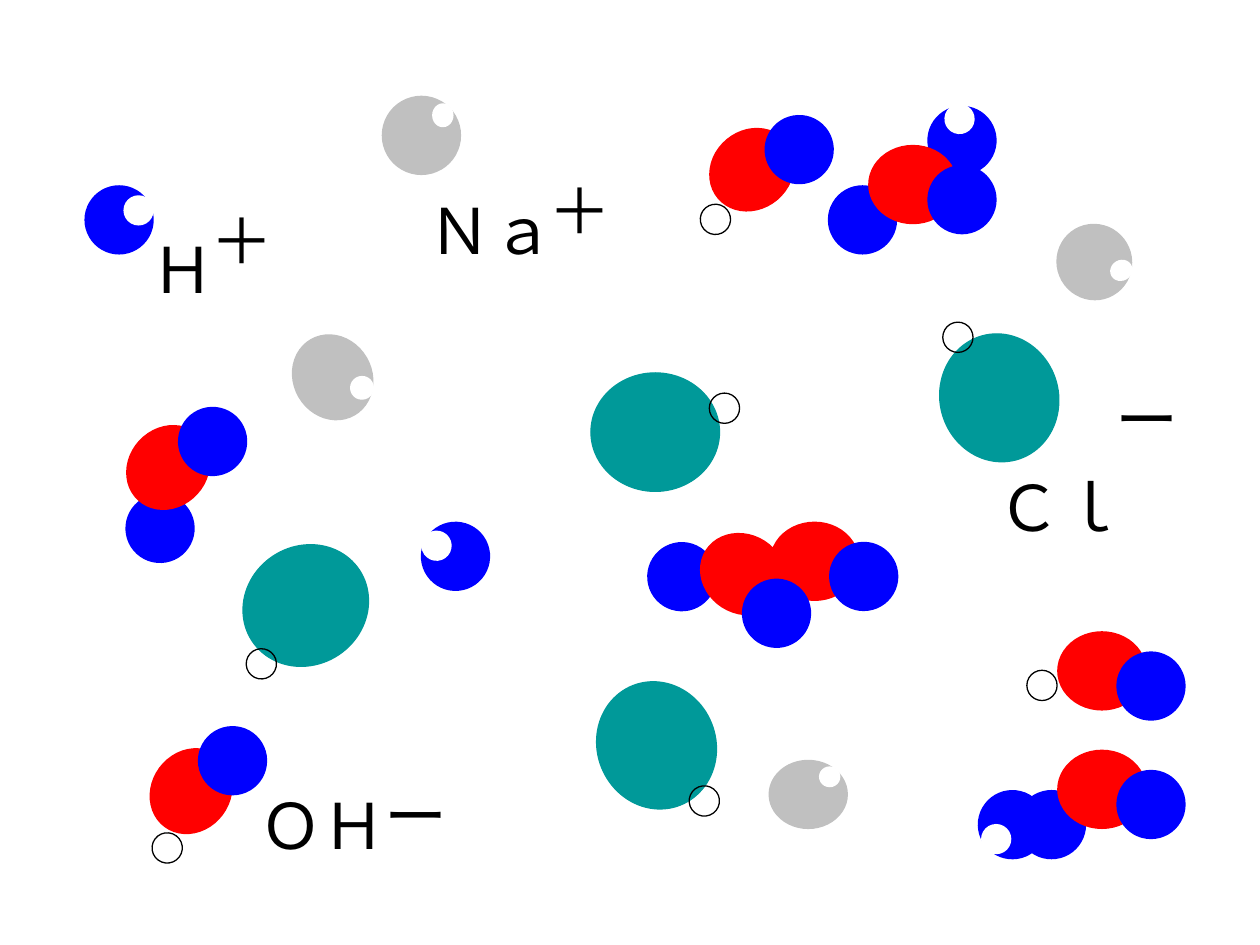
from dataclasses import dataclass
from typing import NamedTuple, Optional

from lxml import etree
from pptx import Presentation
from pptx.dml.color import RGBColor
from pptx.enum.shapes import MSO_SHAPE
from pptx.enum.text import MSO_ANCHOR, PP_ALIGN
from pptx.oxml.ns import qn
from pptx.slide import Slide
from pptx.util import Emu, Pt

PX = 9144  # 100 px to the inch
BLANK_LAYOUT = 6
ELLIPSE = MSO_SHAPE.OVAL
TOP = MSO_ANCHOR.TOP
CENTER = PP_ALIGN.CENTER
LETTER_WIDTH = 52
LABEL_TOP_MARGIN = 5


@dataclass(frozen=True)
class Theme:
    font: str = "Noto Sans CJK JP"
    label_size: int = 36
    line_width: float = 0.75
    hydrogen: str = "0000FF"
    oxygen: str = "FF0000"
    chlorine: str = "009999"
    sodium: str = "C0C0C0"
    white: str = "FFFFFF"
    black: str = "000000"


THEME = Theme()


class Ball(NamedTuple):
    left: int
    top: int
    width: int
    height: int
    fill: Optional[str] = None
    line: Optional[str] = None


class Particle(NamedTuple):
    """A group of balls; width and height, where given, stretch the group."""
    balls: tuple[Ball, ...]
    left: int
    top: int
    rotation: float = 0
    width: Optional[int] = None
    height: Optional[int] = None


class Label(NamedTuple):
    text: str
    center: int
    top: int
    height: int
    rotation: int = 0


PROTON = (
    Ball(0, 0, 55, 55, THEME.hydrogen),
    Ball(31, 8, 24, 24, THEME.white),
)
SODIUM_ION = (
    Ball(0, 0, 63, 63, THEME.sodium),
    Ball(40, 6, 17, 19, THEME.white),
)
CHLORIDE_ION = (
    Ball(0, 0, 102, 94, THEME.chlorine, THEME.chlorine),
    Ball(94, 16, 24, 24, None, THEME.black),
)
HYDROXIDE_ION = (
    Ball(0, 31, 24, 24, THEME.white, THEME.black),
    Ball(24, 0, 71, 63, THEME.oxygen),
    Ball(71, 16, 55, 55, THEME.hydrogen),
)
WATER = (
    Ball(0, 32, 55, 55, THEME.hydrogen),
    Ball(32, 0, 71, 63, THEME.oxygen),
    Ball(79, 16, 55, 55, THEME.hydrogen),
)

PARTICLES = (
    Particle(PROTON, 67, 147),
    Particle(CHLORIDE_ION, 469, 296),
    Particle(PROTON, 334, 414, 235),
    Particle(CHLORIDE_ION, 732, 261, 254.7),
    Particle(CHLORIDE_ION, 177, 438, 146.4),
    Particle(CHLORIDE_ION, 465, 552, 68.4),
    Particle(PROTON, 736, 84, 289.4),
    Particle(PROTON, 776, 627, 164.1),
    Particle(SODIUM_ION, 303, 76),
    Particle(SODIUM_ION, 229, 268, 59.9, 70, 63),
    Particle(HYDROXIDE_ION, 94, 592, 306.5),
    Particle(HYDROXIDE_ION, 539, 100, 319.9),
    Particle(SODIUM_ION, 838, 178, 59.9, 61, 60),
    Particle(HYDROXIDE_ION, 587, 414),
    Particle(SODIUM_ION, 610, 603, 0, 63, 55),
    Particle(HYDROXIDE_ION, 815, 501),
    Particle(WATER, 75, 336, 312.6),
    Particle(WATER, 516, 422, 32.6),
    Particle(WATER, 807, 595),
    Particle(WATER, 657, 115),
)

LABELS = (
    Label("Ｈ", 145, 178, 55),
    Label("＋", 192, 155, 33),
    Label("Ｎａ", 390, 147, 49),
    Label("＋", 460, 131, 39),
    Label("Ｃｌ", 842, 367, 66),
    Label("ー", 910, 360, 8, 180),
    Label("ＯＨ", 256, 619, 49),
    Label("ー", 330, 611, 8),
)


def px(value: int) -> Emu:
    return Emu(value * PX)


def draw_particle(slide: Slide, particle: Particle) -> None:
    group = slide.shapes.add_group_shape()
    for ball in particle.balls:
        shape = group.shapes.add_shape(
            ELLIPSE, px(ball.left), px(ball.top), px(ball.width), px(ball.height))
        shape.shadow.inherit = False
        if ball.fill:
            shape.fill.solid()
            shape.fill.fore_color.rgb = RGBColor.from_string(ball.fill)
        else:
            shape.fill.background()
        if ball.line:
            shape.line.color.rgb = RGBColor.from_string(ball.line)
            shape.line.width = Pt(THEME.line_width)
        else:
            shape.line.fill.background()
    group.left, group.top = px(particle.left), px(particle.top)
    if particle.width and particle.height:
        group.width, group.height = px(particle.width), px(particle.height)
    group.rotation = particle.rotation


def draw_label(slide: Slide, label: Label) -> None:
    width = LETTER_WIDTH * len(label.text)
    shape = slide.shapes.add_textbox(
        px(label.center - width // 2), px(label.top), px(width), px(label.height))
    shape.rotation = label.rotation
    frame = shape.text_frame
    frame.word_wrap = False
    frame.vertical_anchor = TOP
    frame.margin_left = frame.margin_right = frame.margin_bottom = 0
    frame.margin_top = px(LABEL_TOP_MARGIN)
    paragraph = frame.paragraphs[0]
    paragraph.alignment = CENTER
    run = paragraph.add_run()
    run.text = label.text
    run.font.size = Pt(THEME.label_size)
    run.font.name = THEME.font
    run.font.color.rgb = RGBColor.from_string(THEME.black)
    # Full-width letters take the East Asian typeface.
    east_asian = etree.SubElement(run.font._element, qn("a:ea"))
    east_asian.set("typeface", THEME.font)


def main() -> None:
    presentation = Presentation()
    presentation.slide_width, presentation.slide_height = px(1000), px(750)
    slide = presentation.slides.add_slide(presentation.slide_layouts[BLANK_LAYOUT])
    for particle in PARTICLES:
        draw_particle(slide, particle)
    for label in LABELS:
        draw_label(slide, label)
    presentation.save("out.pptx")


if __name__ == "__main__":
    main()
